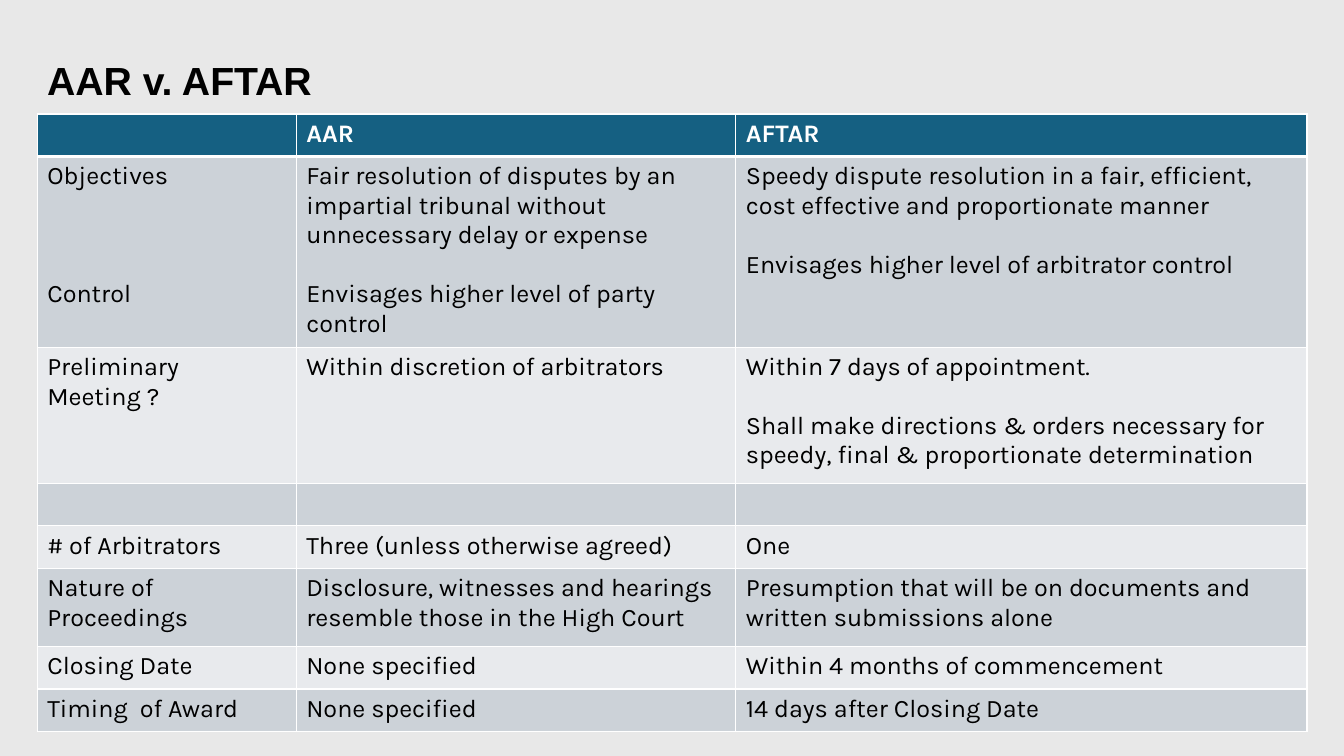
from lxml import etree
from pptx import Presentation
from pptx import util as u
from pptx.dml import color
from pptx.enum import text
from pptx.oxml import ns

COLORS = {
    "background": "E8E8E8",
    "header": "156082",
    "dark_band": "CCD2D8",
    "light_band": "E8EAED",
    "white": "FFFFFF",
    "black": "000000",
}
COLUMN_WIDTHS = [185, 314, 408]
ROW_HEIGHTS = [30.4, 134.2, 97.2, 30.4, 30.4, 55.8, 30.4, 30.4]
LINE = 21
ROWS = [
    ["", "AAR", "AFTAR"],
    [
        ["Objectives", "Control"],
        ["Fair resolution of disputes by an impartial tribunal without unnecessary delay or expense",
         "Envisages higher level of party control"],
        ["Speedy dispute resolution in a fair, efficient, cost effective and proportionate manner",
         "Envisages higher level of arbitrator control"],
    ],
    [
        "Preliminary Meeting ?",
        "Within discretion of arbitrators",
        ["Within 7 days of appointment.",
         "Shall make directions & orders necessary for speedy, final & proportionate determination"],
    ],
    ["", "", ""],
    ["# of Arbitrators", "Three (unless otherwise agreed)", "One"],
    ["Nature of Proceedings",
     "Disclosure, witnesses and hearings resemble those in the High Court",
     "Presumption that will be on documents and written submissions alone"],
    ["Closing Date", "None specified", "Within 4 months of commencement"],
    ["Timing  of Award", "None specified", "14 days after Closing Date"],
]


def rgb(name):
    return color.RGBColor.from_string(COLORS[name])


def write_text(frame, content, font="Karla", size=18, ink="black", bold=False,
               gap=LINE, line_spacing=None):
    paragraphs = [content] if isinstance(content, str) else content
    for index, words in enumerate(paragraphs):
        paragraph = frame.add_paragraph() if index else frame.paragraphs[0]
        if index:
            paragraph.space_before = u.Pt(gap)
        if line_spacing:
            paragraph.line_spacing = line_spacing
        paragraph.font.size = u.Pt(size)
        if words:
            run = paragraph.add_run()
            run.text = words
            run.font.name = font
            run.font.size = u.Pt(size)
            run.font.bold = bold
            run.font.color.rgb = rgb(ink)


class SlideBuilder:
    def __init__(self, presentation):
        self.slide = presentation.slides.add_slide(presentation.slide_layouts[6])
        background = self.slide.background.fill
        background.solid()
        background.fore_color.rgb = rgb("background")

    def title(self, content, left, top, width, height):
        shape = self.slide.shapes.add_textbox(*map(u.Pt, (left, top, width, height)))
        frame = shape.text_frame
        frame.word_wrap = True
        frame.vertical_anchor = text.MSO_ANCHOR.MIDDLE
        write_text(frame, content, font="Arial", size=28, bold=True, line_spacing=0.9)

    def border(self, cell, side, width):
        properties = cell._tc.get_or_add_tcPr()
        line = etree.SubElement(properties, ns.qn(f"a:ln{side}"), w=str(u.Pt(width)))
        fill = etree.SubElement(line, ns.qn("a:solidFill"))
        etree.SubElement(fill, ns.qn("a:srgbClr"), val=COLORS["white"])

    def cell(self, cell, content, fill, bottom=1, **style):
        for side in "LRT":
            self.border(cell, side, 1)
        self.border(cell, "B", bottom)
        cell.fill.solid()
        cell.fill.fore_color.rgb = rgb(fill)
        write_text(cell.text_frame, content, **style)

    def table(self, rows, left, top, widths, heights):
        frame = self.slide.shapes.add_table(
            len(rows), len(widths), u.Pt(left), u.Pt(top),
            u.Pt(sum(widths)), u.Pt(sum(heights)))
        table = frame.table
        for column, width in zip(table.columns, widths):
            column.width = u.Pt(width)
        for row, height in zip(table.rows, heights):
            row.height = u.Pt(height)
        for r, contents in enumerate(rows):
            for c, content in enumerate(contents):
                cell = table.cell(r, c)
                if r == 0:
                    self.cell(cell, content, "header", bottom=3, ink="white", bold=True)
                else:
                    gap = 3 * LINE if c == 0 else LINE
                    self.cell(cell, content, "dark_band" if r % 2 else "light_band", gap=gap)


def main():
    presentation = Presentation()
    presentation.slide_width = u.Pt(960)
    presentation.slide_height = u.Pt(540)
    builder = SlideBuilder(presentation)
    builder.title("AAR v. AFTAR", 26.6, 28.8, 907, 60.5)
    builder.table(ROWS, 26.6, 81.4, COLUMN_WIDTHS, ROW_HEIGHTS)
    presentation.save("out.pptx")


if __name__ == "__main__":
    main()
